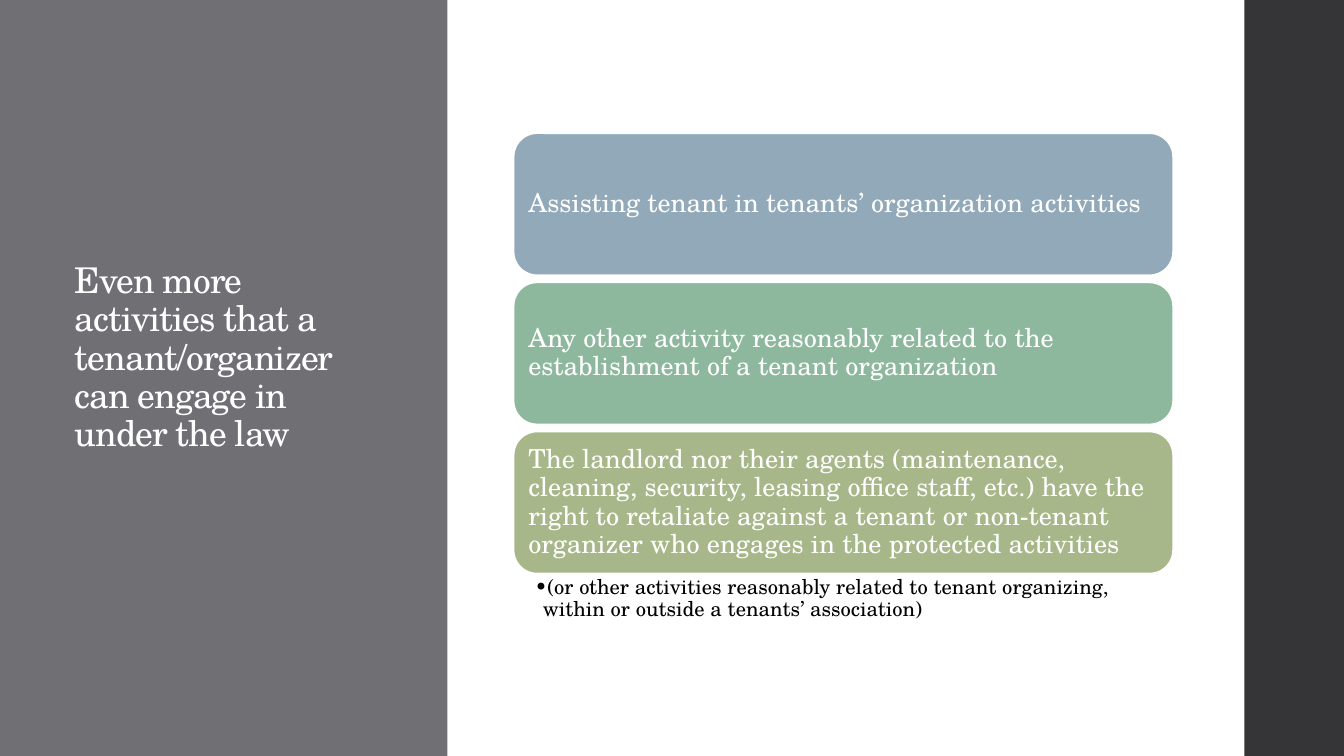
from dataclasses import dataclass
from lxml.etree import SubElement
from pptx import Presentation
from pptx.dml.color import RGBColor
from pptx.enum.shapes import MSO_SHAPE
from pptx.enum.text import MSO_ANCHOR, PP_ALIGN
from pptx.oxml.ns import qn
from pptx.util import Inches, Pt

TITLE = "Even more activities that a tenant/organizer can engage in under the law"
CARDS = [
    ("Assisting tenant in tenants’ organization activities", "92A9B9"),
    ("Any other activity reasonably related to the establishment of a tenant "
     "organization", "8EB89E"),
    ("The landlord nor their agents (maintenance, cleaning, security, leasing "
     "office staff, etc.) have the right to retaliate against a tenant or "
     "non-tenant organizer who engages in the protected activities", "A7B789"),
]
NOTE = ("(or other activities reasonably related to tenant organizing, "
        "within or outside a tenants’ association)")


@dataclass(frozen=True)
class Theme:
    font: str = "TeX Gyre Schola"
    panel: str = "6F6F74"
    edge: str = "353537"
    light: str = "FFFFFF"
    dark: str = "000000"
    title: float = 19
    card: float = 14
    note: float = 11


THEME = Theme()
WIDTH = 10
HEIGHT = WIDTH * 9 / 16
LEFT, TOP, CARD_W, CARD_H, GAP = 3.82, 0.99, 4.91, 1.06, 0.05


def add_block(slide, kind, box, fill, line=None):
    shape = slide.shapes.add_shape(kind, *map(Inches, box))
    shape.shadow.inherit = False
    shape.fill.solid()
    shape.fill.fore_color.rgb = RGBColor.from_string(fill)
    if line:
        shape.line.color.rgb = RGBColor.from_string(line)
        shape.line.width = Pt(1.1)
    else:
        shape.line.fill.background()
    return shape


def write(shape, text, size, color, pads, anchor=MSO_ANCHOR.MIDDLE):
    """Fill the shape with one paragraph; pads are left, top, right, bottom."""
    frame = shape.text_frame
    frame.word_wrap = True
    frame.vertical_anchor = anchor
    (frame.margin_left, frame.margin_top,
     frame.margin_right, frame.margin_bottom) = map(Inches, pads)
    para = frame.paragraphs[0]
    para.alignment = PP_ALIGN.LEFT
    para.line_spacing = 0.9
    run = para.add_run()
    run.text = text
    run.font.name = THEME.font
    run.font.size = Pt(size)
    run.font.color.rgb = RGBColor.from_string(color)
    return para


def add_bullet(para, indent):
    props = para._p.get_or_add_pPr()
    props.set("marL", str(Inches(indent)))
    props.set("indent", str(-Inches(indent)))
    SubElement(props, qn("a:buFont")).set("typeface", THEME.font)
    SubElement(props, qn("a:buChar")).set("char", "•")


def main():
    deck = Presentation()
    deck.slide_width, deck.slide_height = Inches(WIDTH), Inches(HEIGHT)
    slide = deck.slides.add_slide(deck.slide_layouts[6])

    add_block(slide, MSO_SHAPE.RECTANGLE, (0, 0, 3.33, HEIGHT), THEME.panel)
    add_block(slide, MSO_SHAPE.RECTANGLE, (9.26, 0, WIDTH - 9.26, HEIGHT),
              THEME.edge)

    title = slide.shapes.add_textbox(*map(Inches, (0.46, 0.69, 2.23, 3.96)))
    para = write(title, TITLE, THEME.title, THEME.light, (0.1, 0.05, 0.1, 0.05))
    para.runs[0]._r.get_or_add_rPr().set("spc", "-50")

    for row, (text, fill) in enumerate(CARDS):
        top = TOP + row * (CARD_H + GAP)
        card = add_block(slide, MSO_SHAPE.ROUNDED_RECTANGLE,
                         (LEFT, top, CARD_W, CARD_H), fill, THEME.light)
        write(card, text, THEME.card, THEME.light, (0.06,) * 4)

    box = (LEFT, top + CARD_H, CARD_W, 0.37)
    note = slide.shapes.add_textbox(*map(Inches, box))
    para = write(note, NOTE, THEME.note, THEME.dark,
                 (0.16, 0.02, 0.11, 0.02), MSO_ANCHOR.TOP)
    add_bullet(para, 0.06)

    deck.save("out.pptx")


if __name__ == "__main__":
    main()
